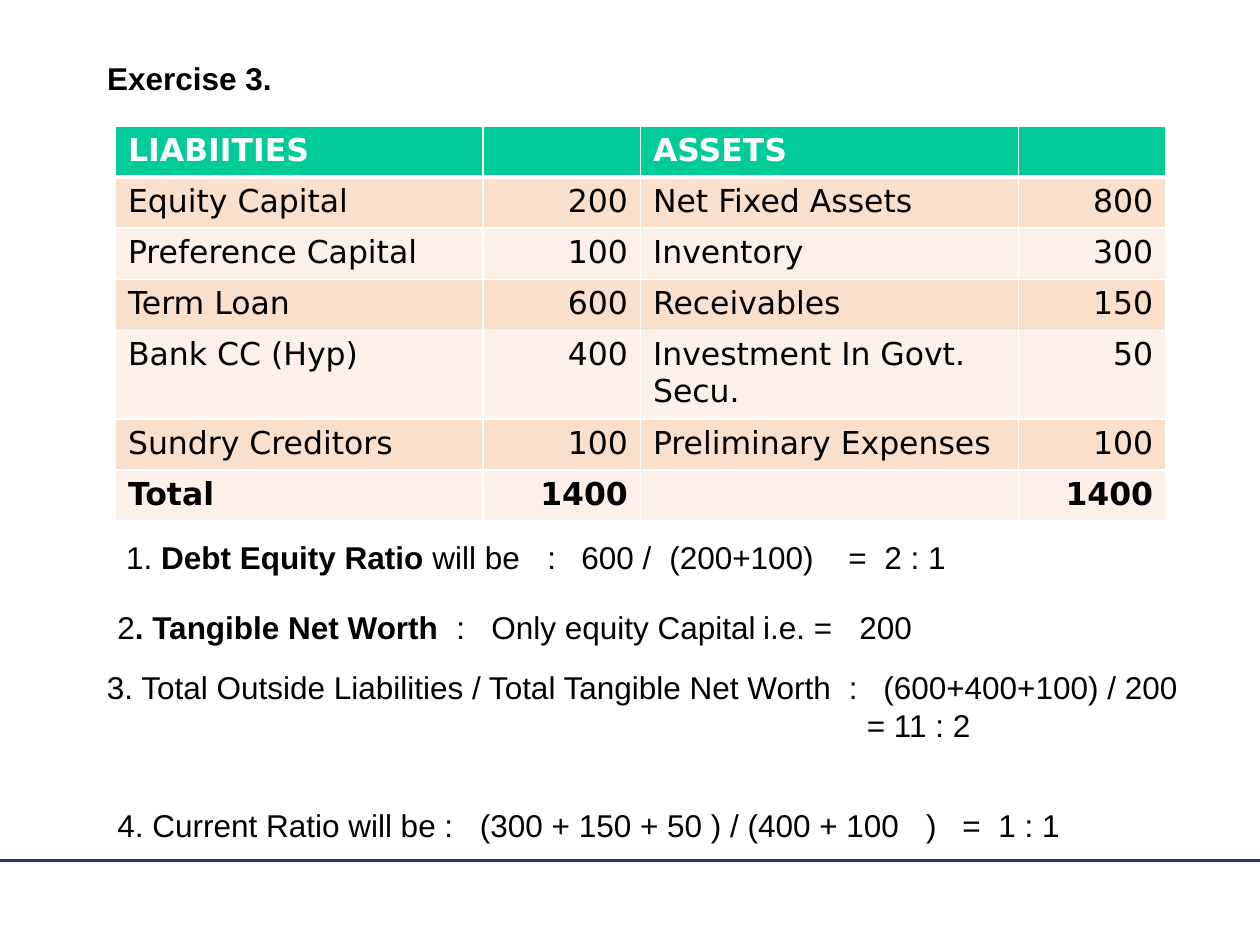
from dataclasses import dataclass

from lxml import etree
from pptx import Presentation
from pptx import util as u
from pptx.dml.color import RGBColor
from pptx.enum import shapes, text
from pptx.oxml import ns

Pt = u.Pt


@dataclass(frozen=True)
class Theme:
    ink: str = "000000"
    white: str = "FFFFFF"
    header: str = "00CC99"
    bands: tuple = ("F9E0CD", "FCF0E8")
    rule: str = "174174"
    body_font: str = "Arial"
    table_font: str = "DejaVu Sans"
    size: int = 18


T = Theme()

COLUMNS = (210, 90, 216, 84.2)
ROW_HEIGHT, TALL_ROW = 29.2, 50.6
BALANCE_SHEET = (
    ("LIABIITIES", "", "ASSETS", ""),
    ("Equity Capital", "200", "Net Fixed Assets", "800"),
    ("Preference Capital", "100", "Inventory", "300"),
    ("Term Loan", "600", "Receivables", "150"),
    ("Bank CC (Hyp)", "400", "Investment In Govt. Secu.", "50"),
    ("Sundry Creditors", "100", "Preliminary Expenses", "100"),
    ("Total", "1400", "", "1400"),
)

# Each answer: (left, top, width, height), tab stops, paragraphs of
# (indent, runs of (wording, bold))
ANSWERS = (
    ((65, 304, 625, 29), (240.7, 260.1, 310.4, 412.7, 433.3),
     ((0, (("1. ", False), ("Debt Equity Ratio ", True),
           ("will be\t:\t600 /\t(200+100)\t=\t2 : 1", False))),)),
    ((60, 343.7, 606, 29), (193.7, 213.7, 369, 424),
     ((0, (("2", False), (". Tangible Net Worth", True),
           ("\t:\tOnly equity Capital\ti.e. =\t200", False))),)),
    ((54, 378, 640, 51), (424, 443.7),
     ((0, (("3. Total Outside Liabilities / Total Tangible Net Worth"
            "\t:\t(600+400+100) / 200", False),)),
      (434.3, (("= 11 : 2", False),)))),
    ((60, 457.2, 642, 29), (207.2, 462.2, 482.8, 503.4),
     ((0, (("4. Current Ratio will be :\t(300 + 150 + 50 ) / (400 + 100"
            "\t)\t=\t1 : 1", False),)),)),
)


def rgb(value):
    return RGBColor.from_string(value)


def place(s, left, top, width, height):
    s.left, s.top, s.width, s.height = map(Pt, (left, top, width, height))


def add_run(p, wording, bold=False, color=T.ink, font=T.body_font):
    r = p.add_run()
    r.text = wording
    r.font.name, r.font.size, r.font.bold = font, Pt(T.size), bold
    r.font.color.rgb = rgb(color)


def set_tabs(p, stops):
    tabs = etree.SubElement(p._p.get_or_add_pPr(), ns.qn("a:tabLst"))
    for stop in stops:
        etree.SubElement(tabs, ns.qn("a:tab"), pos=str(int(Pt(stop))), algn="l")


def set_indent(p, indent):
    pPr = p._p.get_or_add_pPr()
    pPr.set("marL", str(int(Pt(indent))))
    pPr.set("indent", "0")


def add_title(slide, wording):
    s = slide.shapes.title
    place(s, 54, 30.2, 612, 29)
    tf = s.text_frame
    tf.auto_size = text.MSO_AUTO_SIZE.NONE
    tf.vertical_anchor = text.MSO_ANCHOR.TOP
    p = tf.paragraphs[0]
    p.alignment = text.PP_ALIGN.LEFT
    add_run(p, wording, bold=True)


def add_rule(slide, y):
    s = slide.shapes.add_connector(
        shapes.MSO_CONNECTOR.STRAIGHT, 0, Pt(y), Pt(720), Pt(y))
    s.line.color.rgb = rgb(T.rule)
    s.line.width = Pt(2)
    etree.SubElement(s._element.spPr, ns.qn("a:effectLst"))


def set_borders(cell, **widths):
    tcPr = cell._tc.get_or_add_tcPr()
    for side in "LRTB":
        ln = etree.SubElement(tcPr, ns.qn(f"a:ln{side}"),
                              w=str(int(Pt(widths.get(side, 1)))))
        fill = etree.SubElement(ln, ns.qn("a:solidFill"))
        etree.SubElement(fill, ns.qn("a:srgbClr"), val=T.white)


def add_balance_sheet(slide):
    last = len(BALANCE_SHEET) - 1
    table = slide.shapes.add_table(
        last + 1, len(COLUMNS), Pt(66), Pt(72), Pt(sum(COLUMNS)),
        Pt(ROW_HEIGHT * last + TALL_ROW)).table
    for column, width in zip(table.columns, COLUMNS):
        column.width = Pt(width)
    for i, row in enumerate(BALANCE_SHEET):
        # The long investment entry wraps to two lines
        table.rows[i].height = Pt(TALL_ROW if i == 4 else ROW_HEIGHT)
        for j, wording in enumerate(row):
            cell = table.cell(i, j)
            set_borders(cell, T=3 if i == 1 else 1, B=3 if i == 0 else 1)
            cell.fill.solid()
            cell.fill.fore_color.rgb = rgb(
                T.bands[(i - 1) % 2] if i else T.header)
            p = cell.text_frame.paragraphs[0]
            if j % 2:
                p.alignment = text.PP_ALIGN.RIGHT
            if wording:
                add_run(p, wording, i in (0, last),
                        T.ink if i else T.white, T.table_font)


def add_answer(slide, box, stops, paragraphs):
    tf = slide.shapes.add_textbox(*map(Pt, box)).text_frame
    tf.word_wrap = True
    for i, (indent, runs) in enumerate(paragraphs):
        p = tf.add_paragraph() if i else tf.paragraphs[0]
        if indent:
            set_indent(p, indent)
        else:
            set_tabs(p, stops)
        for wording, bold in runs:
            add_run(p, wording, bold)


def main():
    prs = Presentation()
    prs.slide_width, prs.slide_height = Pt(720), Pt(540)
    slide = prs.slides.add_slide(prs.slide_layouts[5])

    # Footer rule and heading
    add_rule(slide, 491.8)
    add_title(slide, "Exercise 3.")

    # Balance sheet and the ratios worked out from it
    add_balance_sheet(slide)
    for answer in ANSWERS:
        add_answer(slide, *answer)

    prs.save("out.pptx")


if __name__ == "__main__":
    main()
